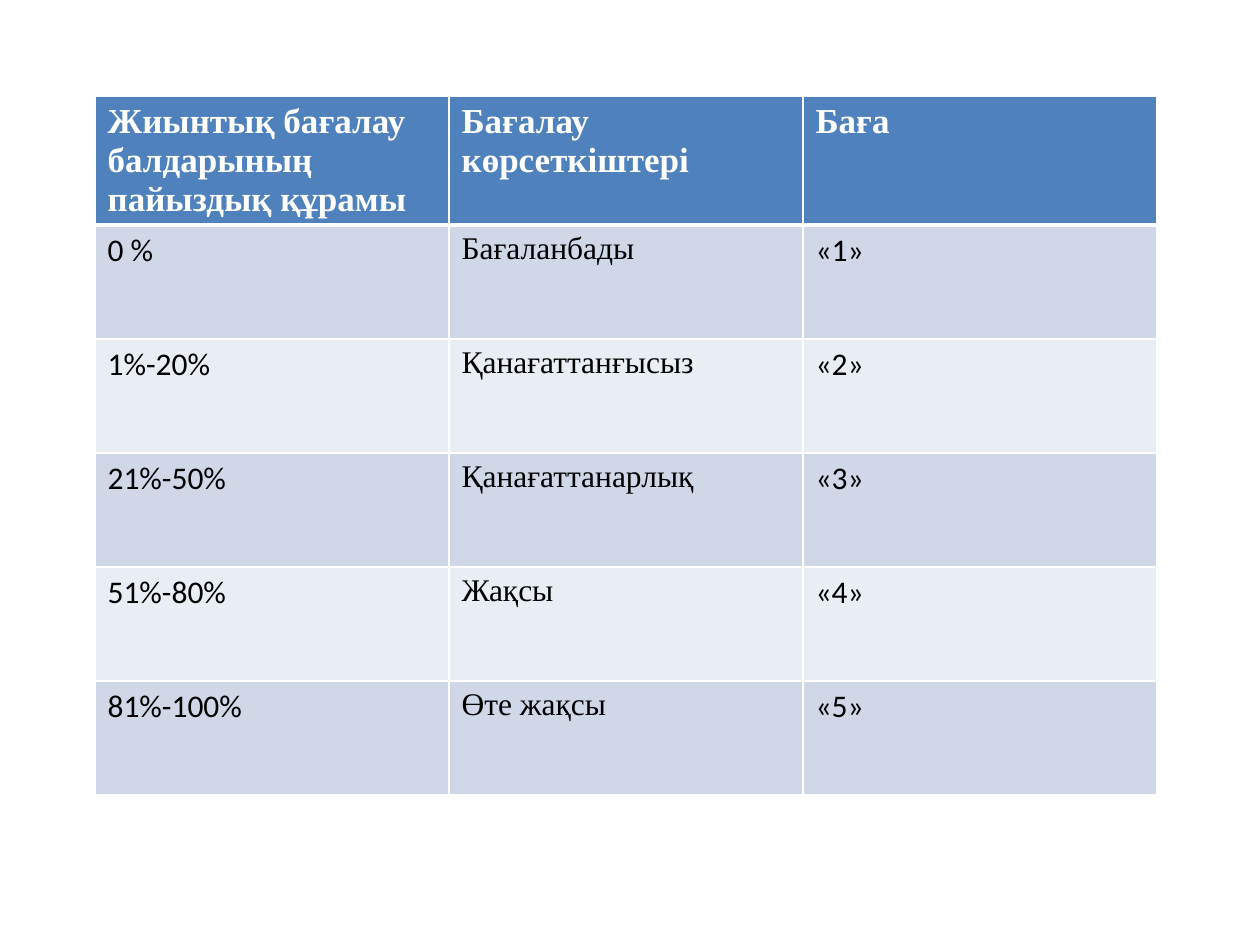
"""Builds a slide with a table of grading bands."""
import dataclasses

import lxml.etree
import pptx
import pptx.dml.color
import pptx.oxml.ns
import pptx.util


@dataclasses.dataclass(frozen=True)
class Theme:
    head: str = "4F81BD"
    bands: tuple = ("D0D8E8", "E9EDF4")
    light: str = "FFFFFF"
    dark: str = "000000"
    serif: str = "Times New Roman"
    sans: str = "Calibri"
    large: int = 20
    body: int = 18
    thin: int = 1
    thick: int = 3


def px(num):
    return pptx.util.Emu(round(num * 914400 / 126))


class Deck:
    def __init__(self, theme):
        self.theme = theme
        self.file = pptx.Presentation()
        self.file.slide_width, self.file.slide_height = px(1260), px(945)
        self.slide = self.file.slides.add_slide(self.file.slide_layouts[6])

    def border(self, cell, sides):
        props = cell._tc.get_or_add_tcPr()
        name = pptx.oxml.ns.qn
        for spot, (side, width) in enumerate(sides.items()):
            line = lxml.etree.Element(name(f"a:ln{side}"), w=str(pptx.util.Pt(width)))
            fill = lxml.etree.SubElement(line, name("a:solidFill"))
            lxml.etree.SubElement(fill, name("a:srgbClr"), val=self.theme.light)
            props.insert(spot, line)

    def cell(self, cell, text, fill, color, style, sides):
        cell.text = text
        cell.fill.solid()
        cell.fill.fore_color.rgb = pptx.dml.color.RGBColor.from_string(fill)
        font = cell.text_frame.paragraphs[0].runs[0].font
        for key, value in style.items():
            setattr(font, key, value)
        font.color.rgb = pptx.dml.color.RGBColor.from_string(color)
        self.border(cell, sides)

    def table(self, left, top, wide, high, rows):
        look = self.theme
        count = len(rows[0])
        frame = self.slide.shapes.add_table(
            len(rows), count, px(left), px(top), px(wide * count), px(high * len(rows)))
        grid = frame.table
        for row, texts in enumerate(rows):
            first = row == 0
            fill = look.head if first else look.bands[(row - 1) % 2]
            color = look.light if first else look.dark
            sides = dict.fromkeys("LRTB", look.thin)
            if first:
                sides["B"] = look.thick
            elif row == 1:
                sides["T"] = look.thick
            for col, text in enumerate(texts):
                style = {
                    "name": look.serif if first or col == 1 else look.sans,
                    "size": pptx.util.Pt(look.large if first else look.body),
                    "bold": first,
                }
                self.cell(grid.cell(row, col), text, fill, color, style, sides)

    def save(self):
        self.file.save("out.pptx")


GRADES = [
    ("Жиынтық бағалау балдарының пайыздық құрамы", "Бағалау көрсеткіштері", "Баға"),
    ("0 %", "Бағаланбады", "«1»"),
    ("1%-20%", "Қанағаттанғысыз", "«2»"),
    ("21%-50%", "Қанағаттанарлық", "«3»"),
    ("51%-80%", "Жақсы", "«4»"),
    ("81%-100%", "Өте жақсы", "«5»"),
]


def main():
    deck = Deck(Theme())
    deck.table(95, 96, 354, 114, GRADES)
    deck.save()


if __name__ == "__main__":
    main()
